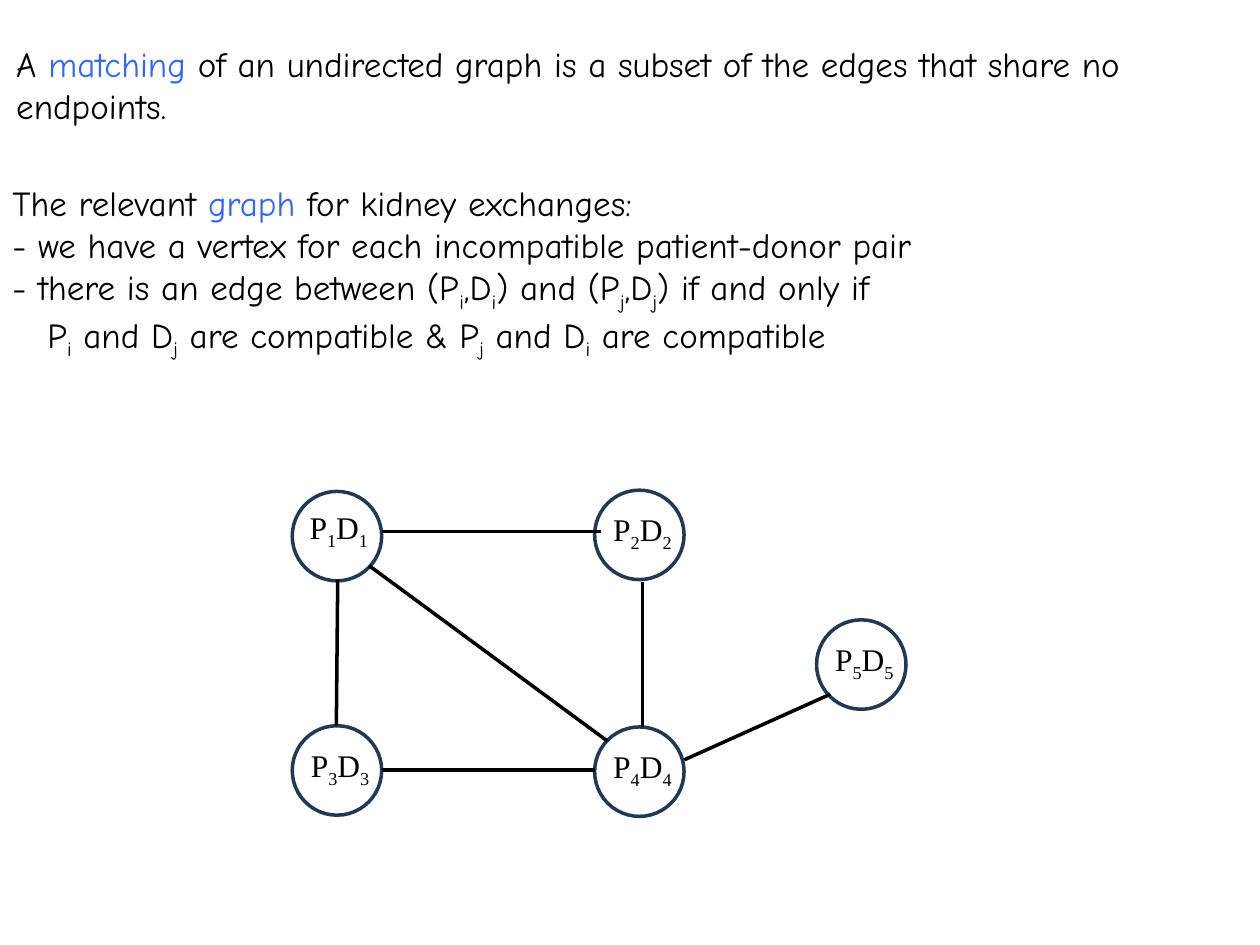
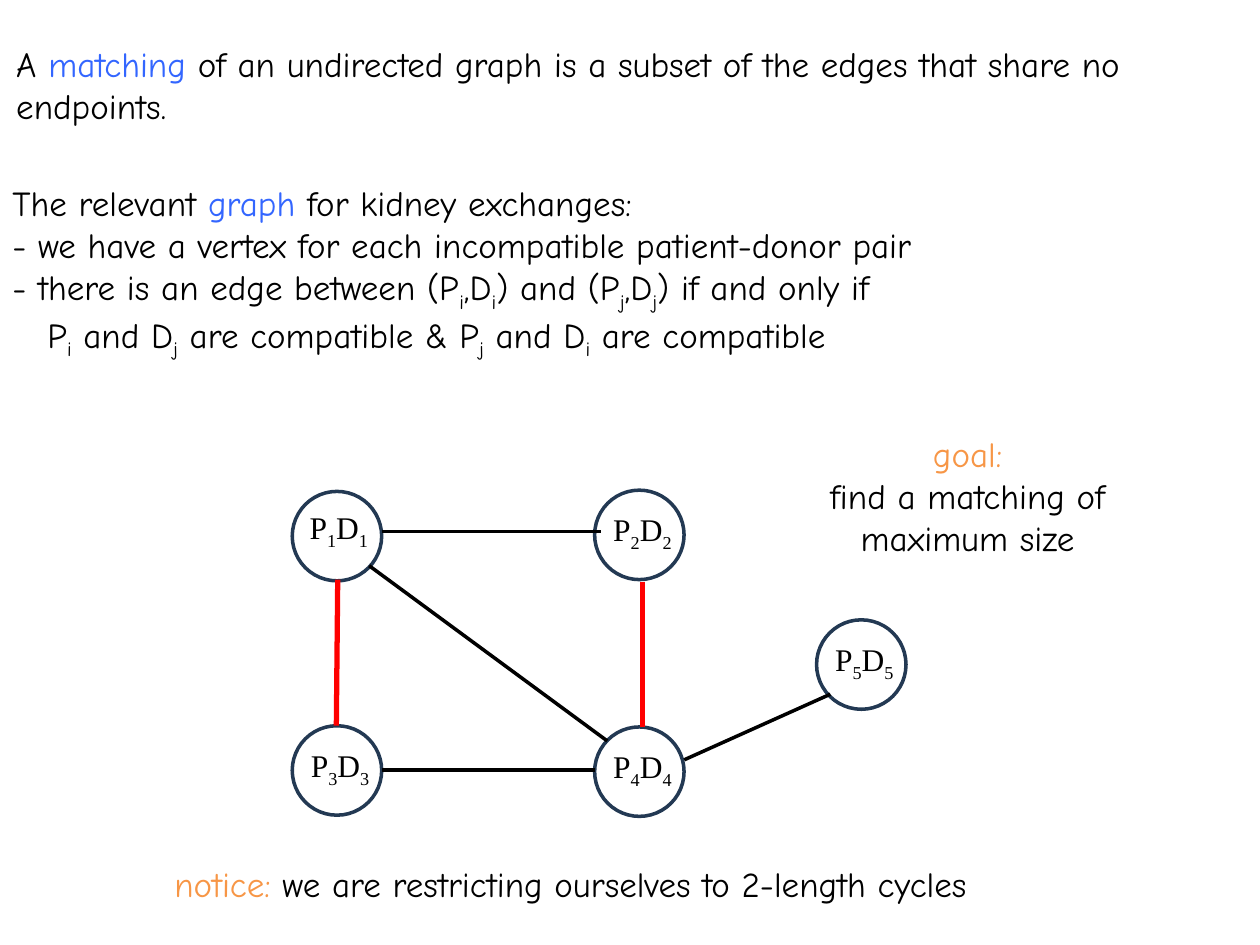
from typing import NamedTuple

from lxml import etree
from pptx import Presentation
from pptx.dml.color import RGBColor
from pptx.enum import shapes as kinds, text as txt
from pptx.oxml import ns
from pptx.util import Pt

HUES = {
    "ink": "000000",
    "paper": "FFFFFF",
    "term": "3366FF",
    "ring": "233953",
    "note": "F79646",
    "match": "FF0000",
}
HAND, SERIF = "Comic Neue", "Times New Roman"
SIDE = 51.1


class Span(NamedTuple):
    text: str  # the letter after an underscore is a subscript
    hue: str = "ink"


class Para(NamedTuple):
    spans: list[Span]
    indent: float = 0


class Block(NamedTuple):
    left: float
    top: float
    width: float
    height: float
    paras: list[Para]
    centre: bool = False
    font: str = HAND
    size: float = 20


class Node(NamedTuple):
    num: int
    left: float
    top: float
    dx: float = -2.2
    dy: float = 7.9
    width: float = 59


class Edge(NamedTuple):
    x1: float
    y1: float
    x2: float
    y2: float
    matched: bool = False


RULES = [
    Block(2.2, 20.9, 715, 55.4, [
        Para([Span("A "), Span("matching", "term"),
              Span(" of an undirected graph is a subset of the edges"
                   " that share no endpoints.")]),
    ]),
    Block(0, 100.1, 715, 104.4, [
        Para([Span("The relevant "), Span("graph", "term"),
              Span(" for kidney exchanges:")]),
        Para([Span("- we have a vertex for each incompatible patient-donor pair")]),
        Para([Span("- there is an edge between (P_i,D_i) and (P_j,D_j) if and only if")]),
        Para([Span("P_i and D_j are compatible & P_j and D_i are compatible")], 20),
    ]),
]
NOTES = [
    Block(439.2, 243.4, 227.5, 79.9, [
        Para([Span("goal:", "note")]),
        Para([Span("find a matching of maximum size")]),
    ], centre=True),
    Block(48.2, 489.6, 555.8, 31.7, [
        Para([Span("notice:", "note"),
              Span(" we are restricting ourselves to 2-length cycles")]),
    ], centre=True),
]
NODES = [
    Node(1, 167, 280.8, 0, 5.8, 53.3),
    Node(2, 339.8, 280.1),
    Node(3, 167, 414.7),
    Node(4, 339.8, 415.4),
    Node(5, 466.6, 354.2),
]
EDGES = [
    Edge(218.2, 303.8, 343.4, 303.8),
    Edge(218.2, 439.9, 339.8, 439.9),
    Edge(391, 434.2, 474.5, 396.7),
    Edge(192.2, 414.7, 193, 331.2, matched=True),
    Edge(367.2, 415.4, 367.2, 332.6, matched=True),
    Edge(211, 323.3, 347, 423.4),
]


def tint(name: str) -> RGBColor:
    return RGBColor.from_string(HUES[name])


def add_run(para, text: str, hue: str, block: Block, sub: bool = False) -> None:
    if not text:
        return
    run = para.add_run()
    run.text = text
    run.font.name = block.font
    run.font.size = Pt(block.size)
    run.font.color.rgb = tint(hue)
    if sub:
        run._r.get_or_add_rPr().set("baseline", "-25000")


def add_span(para, span: Span, block: Block) -> None:
    head, *rest = span.text.split("_")
    add_run(para, head, span.hue, block)
    for part in rest:
        add_run(para, part[0], span.hue, block, sub=True)
        add_run(para, part[1:], span.hue, block)


def add_block(slide, block: Block) -> None:
    box = slide.shapes.add_textbox(*map(Pt, block[:4]))
    frame = box.text_frame
    frame.word_wrap = True
    frame.auto_size = txt.MSO_AUTO_SIZE.SHAPE_TO_FIT_TEXT
    for i, item in enumerate(block.paras):
        para = frame.add_paragraph() if i else frame.paragraphs[0]
        if block.centre:
            para.alignment = txt.PP_ALIGN.CENTER
        if item.indent:
            para._p.get_or_add_pPr().set("marL", str(Pt(item.indent)))
        for span in item.spans:
            add_span(para, span, block)


def add_node(slide, node: Node) -> None:
    ring = slide.shapes.add_shape(
        kinds.MSO_SHAPE.OVAL, *map(Pt, (node.left, node.top, SIDE, SIDE)))
    ring.shadow.inherit = False
    ring.fill.solid()
    ring.fill.fore_color.rgb = tint("paper")
    ring.line.color.rgb = tint("ring")
    ring.line.width = Pt(2)
    name = Para([Span(f"P_{node.num}D_{node.num}")])
    add_block(slide, Block(node.left + node.dx, node.top + node.dy, node.width,
                           SIDE, [name], centre=True, font=SERIF, size=18))


def add_edge(slide, edge: Edge, show: bool) -> None:
    """Draw an edge, in red if it is matched and the matching is shown."""
    bold = show and edge.matched
    line = slide.shapes.add_connector(
        kinds.MSO_CONNECTOR.STRAIGHT, *map(Pt, edge[:4]))
    line.line.color.rgb = tint("match" if bold else "ink")
    line.line.width = Pt(3 if bold else 2)
    etree.SubElement(line._element.spPr, ns.qn("a:effectLst"))


def add_page(deck, notes: list[Block], show: bool) -> None:
    slide = deck.slides.add_slide(deck.slide_layouts[6])
    for block in RULES:
        add_block(slide, block)
    for node in NODES:
        add_node(slide, node)
    for edge in EDGES:
        add_edge(slide, edge, show)
    for block in notes:
        add_block(slide, block)


def main() -> None:
    deck = Presentation()
    deck.slide_width, deck.slide_height = Pt(720), Pt(540)
    add_page(deck, [], show=False)
    add_page(deck, NOTES, show=True)
    deck.save("out.pptx")


if __name__ == "__main__":
    main()
